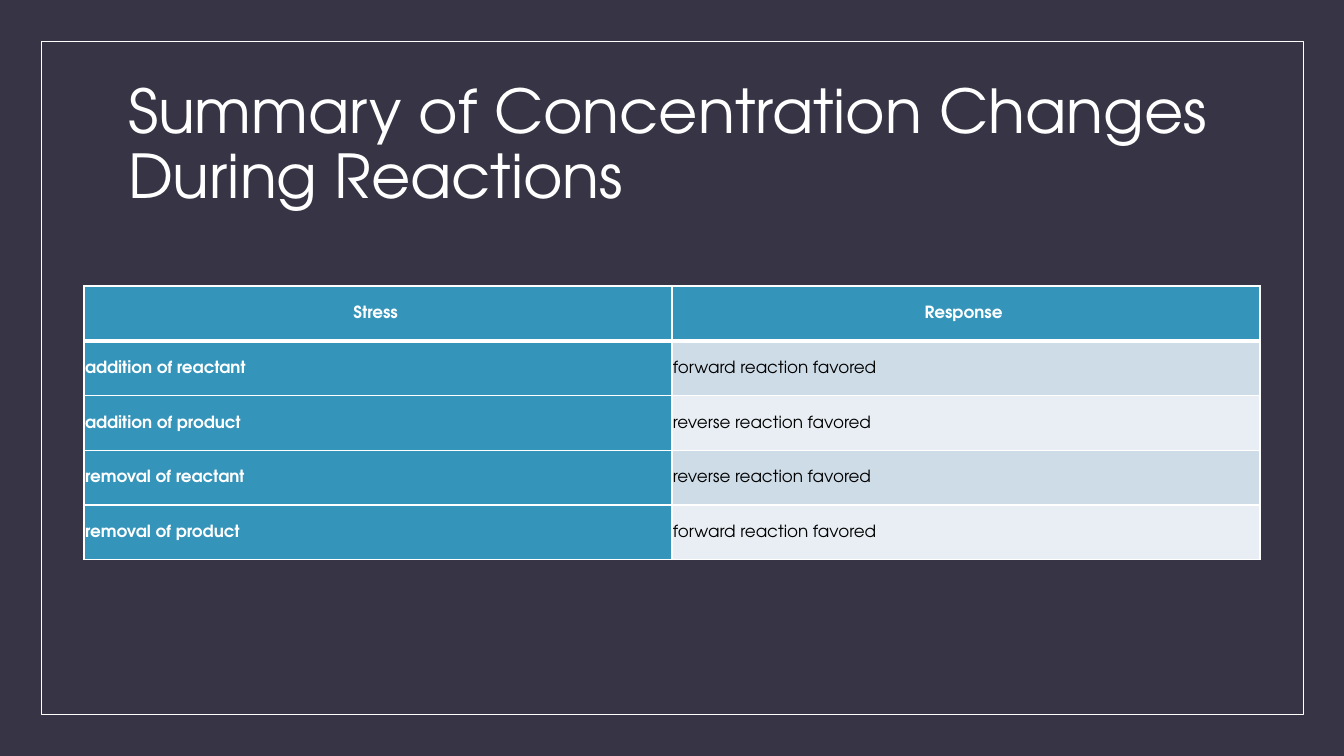
"""Build a slide that tabulates how concentration stresses shift a reaction."""
import dataclasses

import lxml.etree
import pptx
import pptx.dml.color
import pptx.enum.shapes
import pptx.enum.text
import pptx.oxml.ns
import pptx.util

Align = pptx.enum.text.PP_ALIGN
Anchor = pptx.enum.text.MSO_ANCHOR


@dataclasses.dataclass(frozen=True)
class Theme:
    font: str = "TeX Gyre Adventor"
    background: str = "373545"
    line: str = "FFFFFF"
    light_text: str = "FFFFFF"
    dark_text: str = "000000"
    accent: str = "3494BA"
    bands: tuple = ("CEDCE7", "E8EEF3")
    title_size: float = 43.2
    table_size: float = 12
    frame_width: float = 0.5
    border_width: float = 1
    header_width: float = 3


def px(length):
    return round(length * 914400 / 100.8)


def rgb(value):
    return pptx.dml.color.RGBColor.from_string(value)


class SlideBuilder:
    def __init__(self, deck, theme):
        self.theme = theme
        self.page = deck.slides.add_slide(deck.slide_layouts[5])
        fill = self.page.background.fill
        fill.solid()
        fill.fore_color.rgb = rgb(theme.background)

    def style_text(self, para, size, color, bold, spacing, align=Align.LEFT):
        para.alignment = align
        para.line_spacing = spacing
        for span in para.runs:
            span.font.name = self.theme.font
            span.font.size = pptx.util.Pt(size)
            span.font.bold = bold
            span.font.color.rgb = rgb(color)

    def frame(self, left, top, width, height):
        box = self.page.shapes.add_shape(
            pptx.enum.shapes.MSO_SHAPE.RECTANGLE,
            px(left), px(top), px(width), px(height))
        box.shadow.inherit = False
        box.fill.background()
        box.line.color.rgb = rgb(self.theme.line)
        box.line.width = pptx.util.Pt(self.theme.frame_width)
        self.page.shapes.element.insert(2, box.element)

    def title(self, text, left, top, width, height):
        box = self.page.shapes.title
        box.left, box.top = px(left), px(top)
        box.width, box.height = px(width), px(height)
        frame = box.text_frame
        frame.text = text
        frame.word_wrap = True
        frame.auto_size = pptx.enum.text.MSO_AUTO_SIZE.NONE
        frame.vertical_anchor = Anchor.MIDDLE
        self.style_text(frame.paragraphs[0], self.theme.title_size,
                        self.theme.light_text, False, 0.9)

    def border(self, cell, side, width):
        properties = cell._tc.get_or_add_tcPr()
        line = lxml.etree.Element(pptx.oxml.ns.qn(f"a:ln{side}"),
                                  w=str(pptx.util.Pt(width)))
        fill = lxml.etree.SubElement(line, pptx.oxml.ns.qn("a:solidFill"))
        lxml.etree.SubElement(fill, pptx.oxml.ns.qn("a:srgbClr"),
                              val=self.theme.line)
        properties.append(line)

    def cell(self, cell, text, row, column):
        theme = self.theme
        heading = row == 0 or column == 0
        cell.text = text
        cell.vertical_anchor = Anchor.MIDDLE
        cell.margin_left = cell.margin_right = px(1)
        cell.margin_top = cell.margin_bottom = px(1)
        self.style_text(cell.text_frame.paragraphs[0], theme.table_size,
                        theme.light_text if heading else theme.dark_text,
                        heading, 1.07,
                        Align.CENTER if row == 0 else Align.LEFT)
        widths = dict.fromkeys("LRTB", theme.border_width)
        if row < 2:
            widths["B" if row == 0 else "T"] = theme.header_width
        for side, width in widths.items():
            self.border(cell, side, width)
        cell.fill.solid()
        cell.fill.fore_color.rgb = rgb(
            theme.accent if heading else theme.bands[(row - 1) % 2])

    def table(self, rows, left, top, width, height):
        table = self.page.shapes.add_table(
            len(rows), len(rows[0]),
            px(left), px(top), px(width), px(height)).table
        table.first_col = True
        for row, texts in enumerate(rows):
            for column, text in enumerate(texts):
                self.cell(table.cell(row, column), text, row, column)


def main():
    deck = pptx.Presentation()
    deck.slide_width, deck.slide_height = px(1344), px(756)
    builder = SlideBuilder(deck, Theme())
    builder.frame(41, 41, 1262, 673)
    builder.title("Summary of Concentration Changes During Reactions",
                  118, 71, 1109, 151)
    builder.table([
        ("Stress ", "Response "),
        ("addition of reactant", "forward reaction favored"),
        ("addition of product", "reverse reaction favored"),
        ("removal of reactant", "reverse reaction favored"),
        ("removal of product", "forward reaction favored"),
    ], 84, 286, 1176, 274)
    deck.save("out.pptx")


if __name__ == "__main__":
    main()
